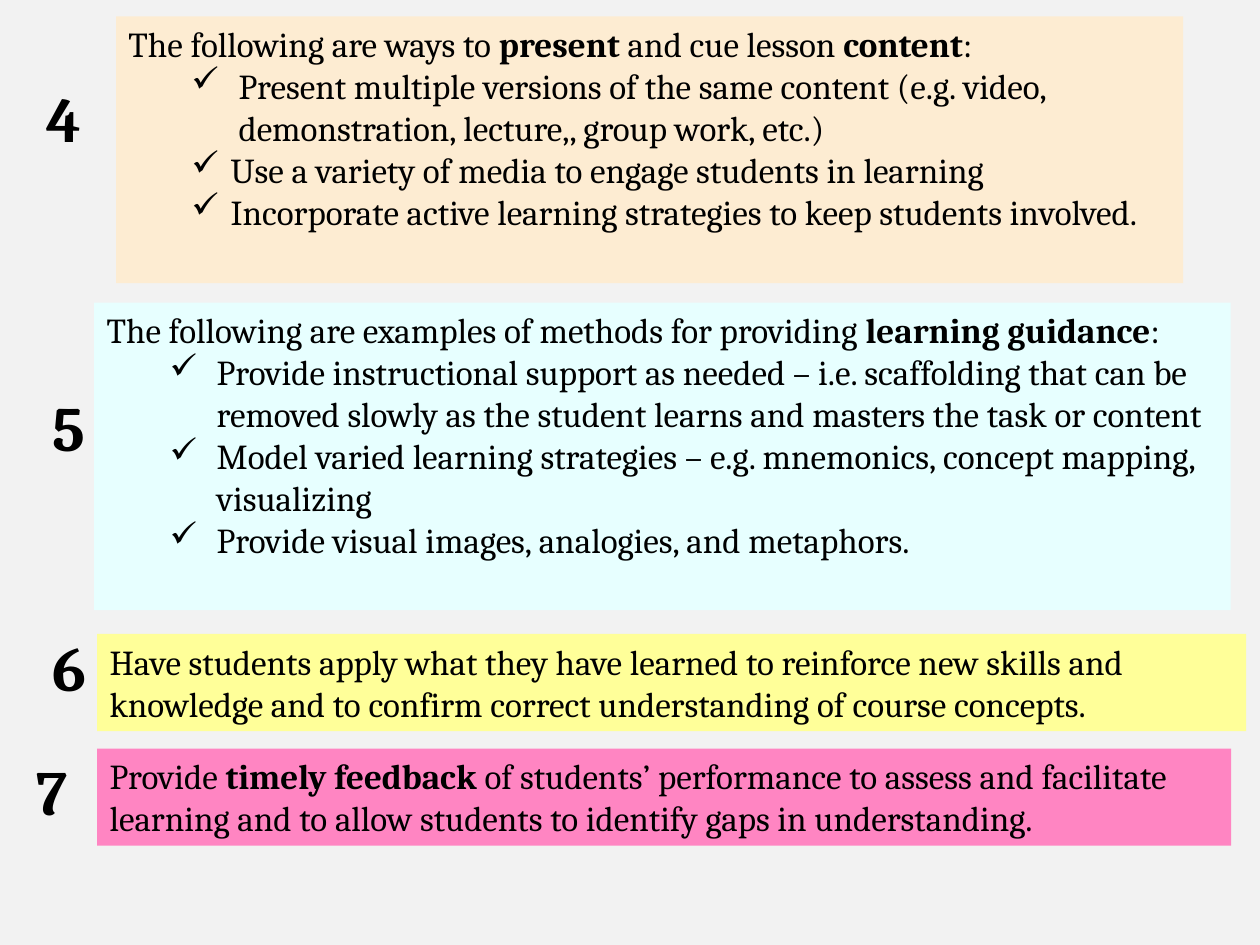
"""Build a slide of numbered teaching steps, each with a coloured panel."""
from dataclasses import dataclass

from lxml import etree
from pptx import Presentation
from pptx import util as u
from pptx.dml.color import RGBColor
from pptx.enum import shapes, text
from pptx.oxml import ns

BACKDROP = RGBColor(0xF2, 0xF2, 0xF2)
INK = RGBColor(0x00, 0x00, 0x00)
PEACH = RGBColor(0xFD, 0xEC, 0xD2)
ICE = RGBColor(0xE7, 0xFF, 0xFF)
YELLOW = RGBColor(0xFF, 0xFF, 0x99)
PINK = RGBColor(0xFF, 0x85, 0xC2)

BODY = {"name": "Cambria", "size": u.Pt(20)}
NUMERAL = {"name": "Cambria", "size": u.Pt(36), "bold": True}
FRAME = {
    "word_wrap": True,
    "auto_size": text.MSO_AUTO_SIZE.NONE,
    "vertical_anchor": text.MSO_ANCHOR.TOP,
}
NUMERAL_SIZE = (1.85, 1.8)
BULLET_OFFSET = 1.27


@dataclass(frozen=True)
class Tip:
    wording: str
    hanging: float = 0.95


@dataclass(frozen=True)
class Step:
    number: str
    number_at: tuple[float, float]
    panel: tuple[float, float, float, float]
    colour: RGBColor
    lead: str
    tips: tuple[Tip, ...] = ()


STEPS = (
    Step("4", (0.69, 1.47), (2.34, 0.33, 21.51, 5.38), PEACH,
         "The following are ways to **present** and cue lesson **content**:",
         (Tip("Present multiple versions of the same content (e.g. video, "
              "demonstration, lecture,, group work, etc.)"),
          Tip("Use a variety of media to engage students in learning", 0.79),
          Tip("Incorporate active learning strategies to keep students involved.", 0.79))),
    Step("5", (0.81, 7.7), (1.9, 6.1, 22.91, 6.2), ICE,
         "The following are examples of methods for providing **learning guidance**:",
         (Tip("Provide instructional support as needed – i.e. scaffolding that can be "
              "removed slowly as the student learns and masters the task or content"),
          Tip("Model varied learning strategies – e.g. mnemonics, concept mapping, visualizing"),
          Tip("Provide visual images, analogies, and metaphors."))),
    Step("6", (0.81, 12.55), (1.96, 12.78, 23.16, 1.96), YELLOW,
         "Have students apply what they have learned to reinforce new skills and "
         "knowledge and to confirm correct understanding of course concepts."),
    Step("7", (0.48, 15.04), (1.96, 15.09, 22.86, 1.96), PINK,
         "Provide **timely feedback **of students’ performance to assess and facilitate "
         "learning and to allow students to identify gaps in understanding."),
)


def apply_format(target, values: dict) -> None:
    """Set each named attribute on the target."""
    for attribute, value in values.items():
        setattr(target, attribute, value)


def write(paragraph, wording: str, style: dict) -> None:
    """Add runs to a paragraph, with bold between double asterisks."""
    paragraph.alignment = text.PP_ALIGN.LEFT
    for index, part in enumerate(wording.split("**")):
        run = paragraph.add_run()
        run.text = part
        apply_format(run.font, {"bold": index % 2 == 1, **style})
        run.font.color.rgb = INK


def add_check(paragraph, hanging: float) -> None:
    """Give a paragraph a hanging check-mark bullet."""
    paragraph.level = 1
    properties = paragraph._p.get_or_add_pPr()
    properties.set("marL", str(u.Cm(BULLET_OFFSET + hanging)))
    properties.set("indent", str(-u.Cm(hanging)))
    etree.SubElement(properties, ns.qn("a:buChar")).set("char", "✓")


def draw_panel(slide, step: Step) -> None:
    """Draw the coloured panel with its lead sentence and tips."""
    panel = slide.shapes.add_shape(shapes.MSO_SHAPE.RECTANGLE, *map(u.Cm, step.panel))
    panel.shadow.inherit = False
    panel.fill.solid()
    panel.fill.fore_color.rgb = step.colour
    panel.line.fill.background()
    frame = panel.text_frame
    apply_format(frame, FRAME)
    write(frame.paragraphs[0], step.lead, BODY)
    for tip in step.tips:
        paragraph = frame.add_paragraph()
        add_check(paragraph, tip.hanging)
        write(paragraph, tip.wording, BODY)


def draw_number(slide, step: Step) -> None:
    """Draw the step number beside its panel."""
    numeral = slide.shapes.add_textbox(*map(u.Cm, step.number_at + NUMERAL_SIZE))
    apply_format(numeral.text_frame, FRAME)
    write(numeral.text_frame.paragraphs[0], step.number, NUMERAL)


def main() -> None:
    """Build and save the presentation."""
    deck = Presentation()
    apply_format(deck, {"slide_width": u.Cm(25.4), "slide_height": u.Cm(19.05)})
    slide = deck.slides.add_slide(deck.slide_layouts[6])
    slide.background.fill.solid()
    slide.background.fill.fore_color.rgb = BACKDROP
    for step in STEPS:
        draw_panel(slide, step)
        draw_number(slide, step)
    deck.save("out.pptx")


if __name__ == "__main__":
    main()
